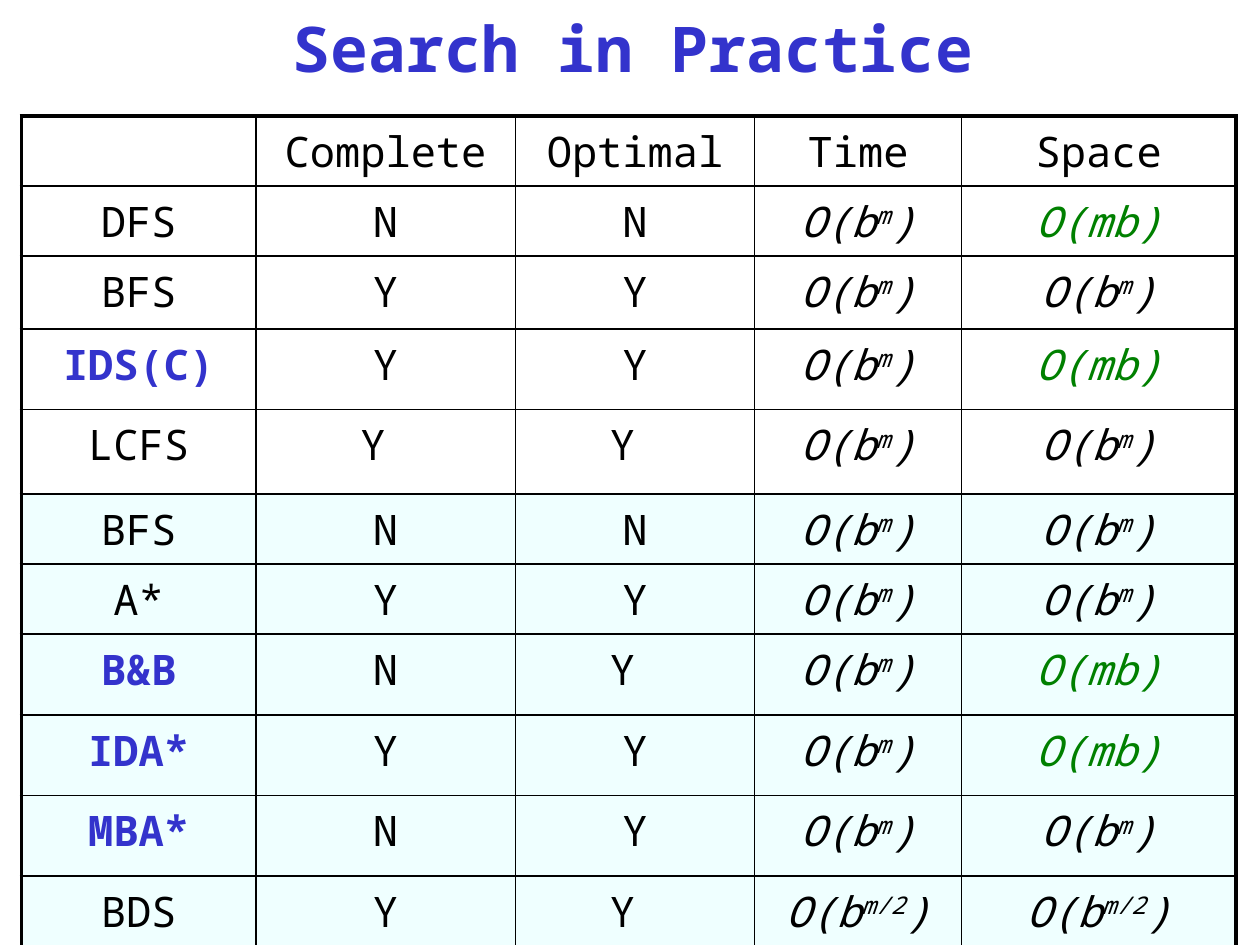
from lxml import etree
from pptx import Presentation, util as u
from pptx.dml.color import RGBColor
from pptx.enum import text
from pptx.oxml import ns

FONT = "Noto Sans Mono"
HUES = {"ink": "000000", "blue": "3333CC", "green": "008000",
        "plain": "FFFFFF", "tint": "EFFFFF"}
TITLE = "Search in Practice"
HEADS = ["", "Complete", "Optimal", "Time", "Space"]
FULL = ["O(b", "m", ")"]
HALF = ["O(b", "m/2", ")"]
SMALL = ["O(mb)"]
ROWS = [
    ("DFS", "N", "N", FULL, SMALL),
    ("BFS", "Y", "Y", FULL, FULL),
    ("IDS(C)", "Y", "Y", FULL, SMALL),
    ("LCFS", "Y ", "Y ", FULL, FULL),
    ("BFS", "N", "N", FULL, FULL),
    ("A*", "Y", "Y", FULL, FULL),
    ("B&B", "N", "Y ", FULL, SMALL),
    ("IDA*", "Y", "Y", FULL, SMALL),
    ("MBA*", "N", "Y", FULL, FULL),
    ("BDS", "Y", "Y ", HALF, HALF),
]
KEY = ["IDS(C)", "B&B", "IDA*", "MBA*"]
TINTED = 5
WIDE = [1.86, 2.06, 1.9, 1.64, 2.18]
LOW, TALL = 0.556, 0.64
HIGH = [LOW, LOW, 0.58, TALL, 0.67, LOW, LOW] + [TALL] * 4
THIN, THICK = 1, 2.25


def style(run, size, hue="ink", bold=False, slant=False):
    font = run.font
    font.name, font.size = FONT, u.Pt(size)
    font.bold, font.italic = bold, slant
    font.color.rgb = RGBColor.from_string(HUES[hue])


def edge(cell, side, width):
    props = cell._tc.get_or_add_tcPr()
    line = etree.SubElement(props, ns.qn("a:ln" + side), w=str(u.Pt(width)))
    fill = etree.SubElement(line, ns.qn("a:solidFill"))
    etree.SubElement(fill, ns.qn("a:srgbClr"), val=HUES["ink"])


def write(cell, value):
    math = isinstance(value, list)
    parts = value if math else [value]
    hue = "green" if value == SMALL else "blue" if value in KEY else "ink"
    para = cell.text_frame.paragraphs[0]
    para.alignment = text.PP_ALIGN.CENTER
    for spot, part in enumerate(parts):
        if part:
            run = para.add_run()
            run.text = part
            style(run, 24, hue, hue == "blue", math)
            if spot == 1:
                run._r.get_or_add_rPr().set("baseline", "30000")


deck = Presentation()
deck.slide_width, deck.slide_height = u.Inches(10), u.Inches(7.5)
slide = deck.slides.add_slide(deck.slide_layouts[6])

box = slide.shapes.add_textbox(u.Inches(0.36), 0, u.Inches(9.33), u.Inches(0.75))
frame = box.text_frame
frame.word_wrap = True
frame.vertical_anchor = text.MSO_ANCHOR.MIDDLE
frame.text = TITLE
frame.paragraphs[0].alignment = text.PP_ALIGN.CENTER
style(frame.paragraphs[0].runs[0], 36, "blue", True)

data = [HEADS] + ROWS
grid = slide.shapes.add_table(
    len(data), len(WIDE), u.Inches(0.17), u.Inches(0.92),
    u.Inches(sum(WIDE)), u.Inches(sum(HIGH))).table
grid.first_row = grid.horz_banding = False
for col, wide in zip(grid.columns, WIDE):
    col.width = u.Inches(wide)
for row, high in zip(grid.rows, HIGH):
    row.height = u.Inches(high)

for r, line in enumerate(data):
    for c, value in enumerate(line):
        cell = grid.cell(r, c)
        outer = {"L": c == 0, "R": c == len(WIDE) - 1,
                 "T": r == 0, "B": r == len(data) - 1}
        for side, rim in outer.items():
            edge(cell, side, THICK if rim else THIN)
        cell.fill.solid()
        hue = HUES["tint" if r >= TINTED else "plain"]
        cell.fill.fore_color.rgb = RGBColor.from_string(hue)
        write(cell, value)

deck.save("out.pptx")
